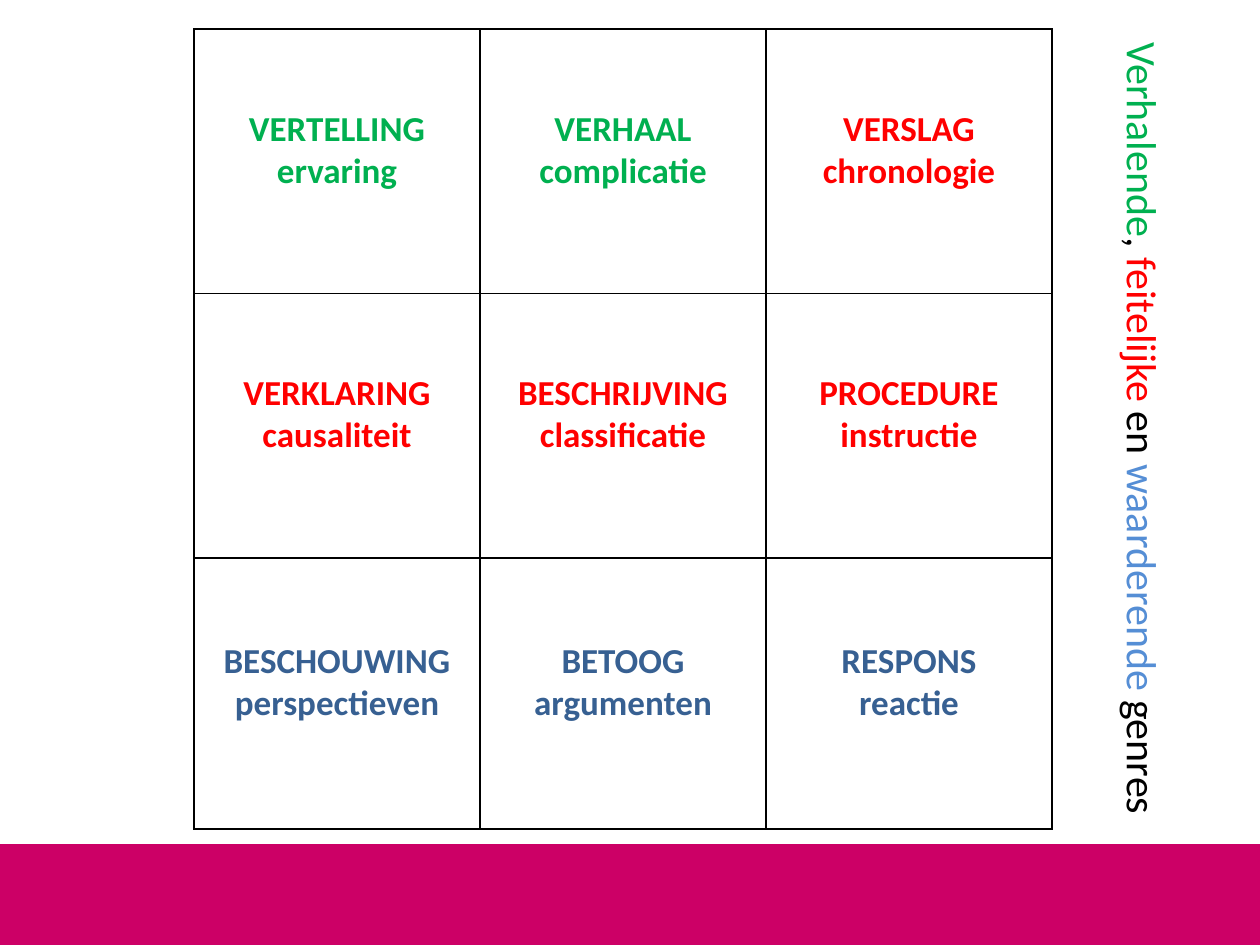
from lxml import etree
from pptx import Presentation
from pptx.dml.color import RGBColor
from pptx.enum.shapes import MSO_SHAPE
from pptx.enum.text import MSO_ANCHOR, MSO_AUTO_SIZE, PP_ALIGN
from pptx.oxml.ns import qn
from pptx.util import Inches, Pt

CENTER = PP_ALIGN.CENTER
MIDDLE = MSO_ANCHOR.MIDDLE
RECTANGLE = MSO_SHAPE.RECTANGLE
FIT_SHAPE = MSO_AUTO_SIZE.SHAPE_TO_FIT_TEXT

FONT = "Calibri"
GREEN, RED, BLUE, LIGHT_BLUE = "00B050", "FF0000", "376092", "558ED5"
BLACK, WHITE, MAGENTA = "000000", "FFFFFF", "CC0066"

GENRES = [
    [("VERTELLING", "ervaring", GREEN), ("VERHAAL", "complicatie", GREEN),
     ("VERSLAG", "chronologie", RED)],
    [("VERKLARING", "causaliteit", RED), ("BESCHRIJVING", "classificatie", RED),
     ("PROCEDURE", "instructie", RED)],
    [("BESCHOUWING", "perspectieven", BLUE), ("BETOOG", "argumenten", BLUE),
     ("RESPONS", "reactie", BLUE)],
]
TITLE = [("Verhalende", GREEN), (", ", BLACK), ("feitelijke", RED),
         (" en ", BLACK), ("waarderende", LIGHT_BLUE), (" genres", BLACK)]

COLUMN_WIDTH = 2.27
ROW_HEIGHTS = [2.1, 2.1, 2.15]
CELL_FORMAT = {"vertical_anchor": MIDDLE, "margin_left": Inches(0.04),
               "margin_right": Inches(0.04), "margin_top": 0, "margin_bottom": 0}
CELL_PARAGRAPH = {"alignment": CENTER, "line_spacing": Pt(12), "space_after": Pt(12)}


def apply(target, values):
    for name, value in values.items():
        setattr(target, name, value)


def color(hex_string):
    return RGBColor.from_string(hex_string)


def paint(fill, hex_string):
    fill.solid()
    fill.fore_color.rgb = color(hex_string)


def add_span(para, text, hex_string, size, bold=False):
    span = para.add_run()
    span.text = text
    apply(span.font, {"name": FONT, "size": Pt(size), "bold": bold})
    span.font.color.rgb = color(hex_string)


def add_borders(cell):
    properties = cell._tc.get_or_add_tcPr()
    for side in ("a:lnL", "a:lnR", "a:lnT", "a:lnB"):
        line = etree.SubElement(properties, qn(side), w=str(Pt(1)))
        fill = etree.SubElement(line, qn("a:solidFill"))
        etree.SubElement(fill, qn("a:srgbClr"), val=BLACK)


def add_band(slide):
    band = slide.shapes.add_shape(RECTANGLE, 0, Inches(6.7), Inches(10), Inches(0.8))
    band.shadow.inherit = False
    paint(band.fill, MAGENTA)
    band.line.fill.background()


def add_genre_table(slide):
    columns = len(GENRES[0])
    table = slide.shapes.add_table(
        len(GENRES), columns, Inches(1.54), Inches(0.23),
        Inches(COLUMN_WIDTH * columns), Inches(sum(ROW_HEIGHTS))).table
    apply(table, {"first_row": False, "horz_banding": False})
    for column in table.columns:
        column.width = Inches(COLUMN_WIDTH)
    for r, (height, genres) in enumerate(zip(ROW_HEIGHTS, GENRES)):
        table.rows[r].height = Inches(height)
        for c, (genre, feature, hex_string) in enumerate(genres):
            cell = table.cell(r, c)
            apply(cell, CELL_FORMAT)
            add_borders(cell)
            paint(cell.fill, WHITE)
            frame = cell.text_frame
            for para, text in ((frame.paragraphs[0], genre),
                               (frame.add_paragraph(), feature)):
                apply(para, CELL_PARAGRAPH)
                add_span(para, text, hex_string, 20, bold=True)


def add_side_title(slide):
    box = slide.shapes.add_textbox(Inches(5.9), Inches(3.15), Inches(6.35), Inches(0.5))
    box.rotation = 90
    apply(box.text_frame, {"word_wrap": True, "auto_size": FIT_SHAPE})
    para = box.text_frame.paragraphs[0]
    para.alignment = CENTER
    for text, hex_string in TITLE:
        add_span(para, text, hex_string, 24)


def main():
    deck = Presentation()
    apply(deck, {"slide_width": Inches(10), "slide_height": Inches(7.5)})
    slide = deck.slides.add_slide(deck.slide_layouts[6])
    paint(slide.background.fill, WHITE)
    add_band(slide)
    add_genre_table(slide)
    add_side_title(slide)
    deck.save("out.pptx")


if __name__ == "__main__":
    main()
